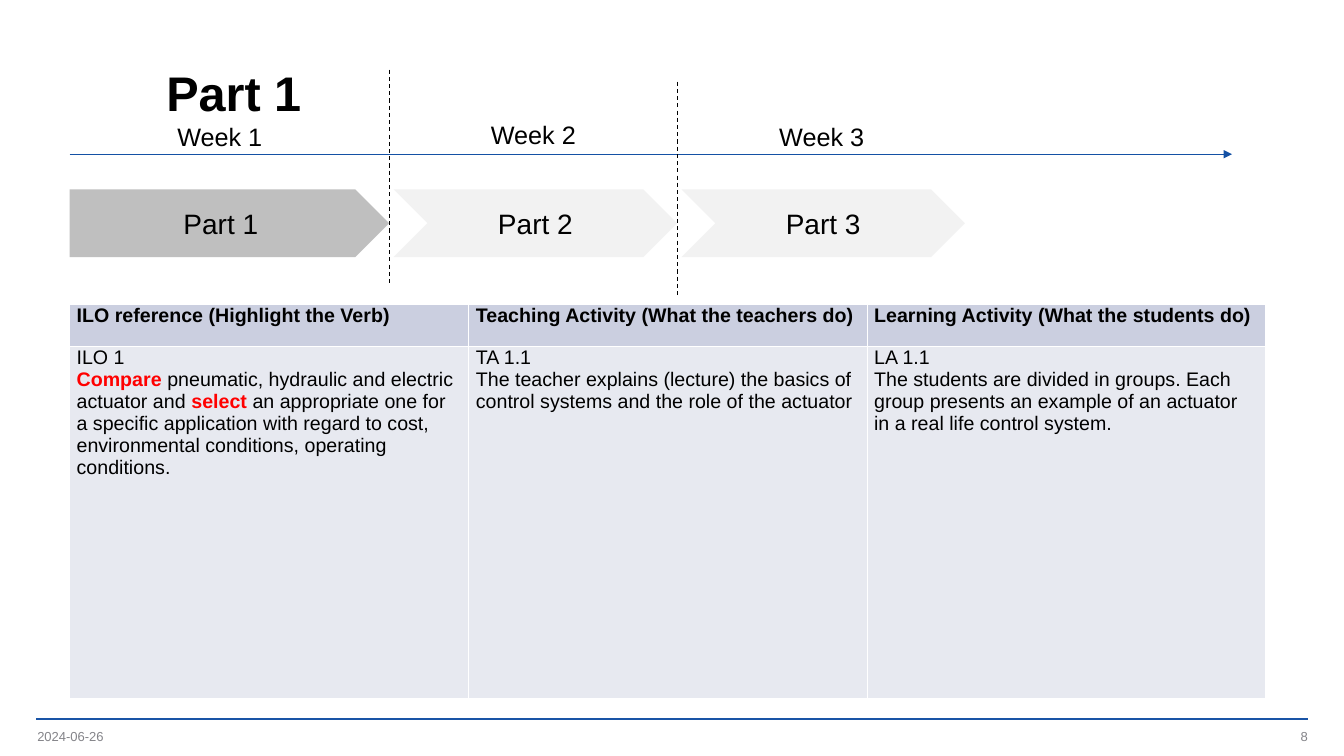
from dataclasses import dataclass

from lxml.etree import SubElement
from pptx import Presentation
from pptx.dml.color import RGBColor
from pptx.enum.dml import MSO_LINE_DASH_STYLE as Dash
from pptx.enum.shapes import MSO_CONNECTOR as Connector, MSO_SHAPE as Shape
from pptx.enum.text import MSO_ANCHOR as Anchor, MSO_AUTO_SIZE as AutoSize, PP_ALIGN as Align
from pptx.oxml.ns import qn
from pptx.util import Inches, Pt


@dataclass(frozen=True)
class Theme:
    font: str = "Arial"
    text: str = "000000"
    muted: str = "848489"
    verb: str = "FF0000"
    rule: str = "1954A6"
    timeline: str = "1451A5"
    divider: str = "000000"
    active: str = "BFBFBF"
    inactive: str = "F2F2F2"
    header: str = "CBCFE0"
    body: str = "E7E9F0"
    border: str = "FFFFFF"
    title_size: float = 34.7
    stage_size: float = 20
    week_size: float = 18
    table_size: float = 14
    footer_size: float = 9.3


class SlideBuilder:
    cell = Inches(0.1)

    def __init__(self, presentation, theme):
        self.theme = theme
        self.slide = presentation.slides.add_slide(presentation.slide_layouts[5])
        self.shapes = self.slide.shapes

    def grid(self, *lengths):
        return [round(length * self.cell) for length in lengths]

    def style(self, paragraph, size, color=None, bold=False, align=Align.LEFT):
        paragraph.alignment = align
        font = paragraph.font
        font.name, font.size, font.bold = self.theme.font, Pt(size), bold
        font.color.rgb = RGBColor.from_string(color or self.theme.text)

    def title(self, text, *box):
        title = self.shapes.title
        title.left, title.top, title.width, title.height = self.grid(*box)
        frame = title.text_frame
        frame.text, frame.auto_size = text, AutoSize.NONE
        frame.vertical_anchor = Anchor.MIDDLE
        paragraph = frame.paragraphs[0]
        paragraph.line_spacing = 1.18
        self.style(paragraph, self.theme.title_size, bold=True)

    def footer(self, text, left, align):
        frame = self.shapes.add_textbox(*self.grid(left, 72.2, 30, 1.7)).text_frame
        frame.margin_left = frame.margin_right = frame.margin_top = frame.margin_bottom = 0
        frame.vertical_anchor, frame.word_wrap = Anchor.MIDDLE, True
        frame.text = text
        self.style(frame.paragraphs[0], self.theme.footer_size, self.theme.muted, align=align)

    def week(self, text, left, top):
        frame = self.shapes.add_textbox(*self.grid(left, top, 10.5, 4)).text_frame
        frame.word_wrap = False
        frame.text = text
        self.style(frame.paragraphs[0], self.theme.week_size)

    def stage(self, text, kind, left, width, color):
        shape = self.shapes.add_shape(kind, *self.grid(left, 18.8, width, 6.7))
        shape.shadow.inherit = False
        shape.fill.solid()
        shape.fill.fore_color.rgb = RGBColor.from_string(color)
        shape.line.fill.background()
        frame = shape.text_frame
        frame.text, frame.vertical_anchor = text, Anchor.MIDDLE
        self.style(frame.paragraphs[0], self.theme.stage_size, align=Align.CENTER)

    def line(self, start, end, color, width=0.75, dash=None, arrow=False):
        line = self.shapes.add_connector(Connector.STRAIGHT, *self.grid(*start, *end))
        line.line.color.rgb = RGBColor.from_string(color)
        line.line.width = Pt(width)
        if dash:
            line.line.dash_style = dash
        properties = line._element.spPr
        if arrow:
            SubElement(properties.find(qn("a:ln")), qn("a:tailEnd"), type="triangle")
        SubElement(properties, qn("a:effectLst"))

    def table(self, rows, left, top, widths, heights):
        box = self.grid(left, top, sum(widths), sum(heights))
        table = self.shapes.add_table(len(rows), len(widths), *box).table
        table.horz_banding = False
        for column, width in zip(table.columns, self.grid(*widths)):
            column.width = width
        for index, (row, height) in enumerate(zip(table.rows, self.grid(*heights))):
            row.height = height
            for cell, paragraphs in zip(row.cells, rows[index]):
                self.table_cell(cell, paragraphs, header=index == 0)

    def table_cell(self, cell, paragraphs, header):
        theme = self.theme
        cell.margin_left = cell.margin_right = Inches(0.07)
        cell.margin_top = cell.margin_bottom = 0
        frame = cell.text_frame
        for index, runs in enumerate(paragraphs):
            paragraph = frame.add_paragraph() if index else frame.paragraphs[0]
            self.style(paragraph, theme.table_size, bold=header)
            for text, is_verb in runs:
                run = paragraph.add_run()
                run.text = text
                run.font.bold = header or is_verb
                color = theme.verb if is_verb else theme.text
                run.font.color.rgb = RGBColor.from_string(color)
        properties = cell._tc.get_or_add_tcPr()
        for side in ("lnL", "lnR", "lnT", "lnB"):
            border = SubElement(properties, qn(f"a:{side}"), w=str(Pt(1)))
            SubElement(SubElement(border, qn("a:solidFill")), qn("a:srgbClr"), val=theme.border)
        cell.fill.solid()
        cell.fill.fore_color.rgb = RGBColor.from_string(theme.header if header else theme.body)


def plain(*lines):
    return [[(line, False)] for line in lines]


def main():
    presentation = Presentation()
    presentation.slide_width, presentation.slide_height = Inches(13.33), Inches(7.5)
    theme = Theme()
    builder = SlideBuilder(presentation, theme)

    builder.line((3.6, 71.3), (129.7, 71.3), theme.rule, width=1.5)
    builder.title("Part 1", 15.5, 3.7, 110.1, 9.8)
    builder.footer("2024-06-26", 3.7, Align.LEFT)
    builder.footer("8", 99.7, Align.RIGHT)

    outcome = [
        ("Compare", True),
        (" pneumatic, hydraulic and electric actuator and ", False),
        ("select", True),
        (" an appropriate one for a specific application with regard to cost, "
         "environmental conditions, operating conditions.", False),
    ]
    rows = [
        [
            plain("ILO reference (Highlight the Verb)"),
            plain("Teaching Activity (What the teachers do)"),
            plain("Learning Activity (What the students do)"),
        ],
        [
            plain("ILO 1") + [outcome],
            plain("TA 1.1", "The teacher explains (lecture) the basics of control systems "
                  "and the role of the actuator"),
            plain("LA 1.1", "The students are divided in groups. Each group presents "
                  "an example of an actuator in a real life control system."),
        ],
    ]
    builder.table(rows, 6.9, 30.2, (39.6, 39.5, 39.5), (4.2, 34.9))

    builder.line((6.9, 15.3), (122.2, 15.3), theme.timeline, arrow=True)
    stages = [
        (Shape.PENTAGON, 31.7, theme.active, 16.6, 11.5, 6.9),
        (Shape.CHEVRON, 28.1, theme.inactive, 47.7, 11.3, 8.1),
        (Shape.CHEVRON, 28.1, theme.inactive, 76.3, 11.5, None),
    ]
    left, gap = 6.9, 0.45
    for number, (kind, width, color, week_left, week_top, divider_top) in enumerate(stages, 1):
        builder.stage(f"Part {number}", kind, left, width, color)
        builder.week(f"Week {number}", week_left, week_top)
        end = left + width
        if divider_top:
            builder.line((end, divider_top), (end, divider_top + 21.4), theme.divider, dash=Dash.DASH)
        left = end + gap

    presentation.save("out.pptx")


if __name__ == "__main__":
    main()
